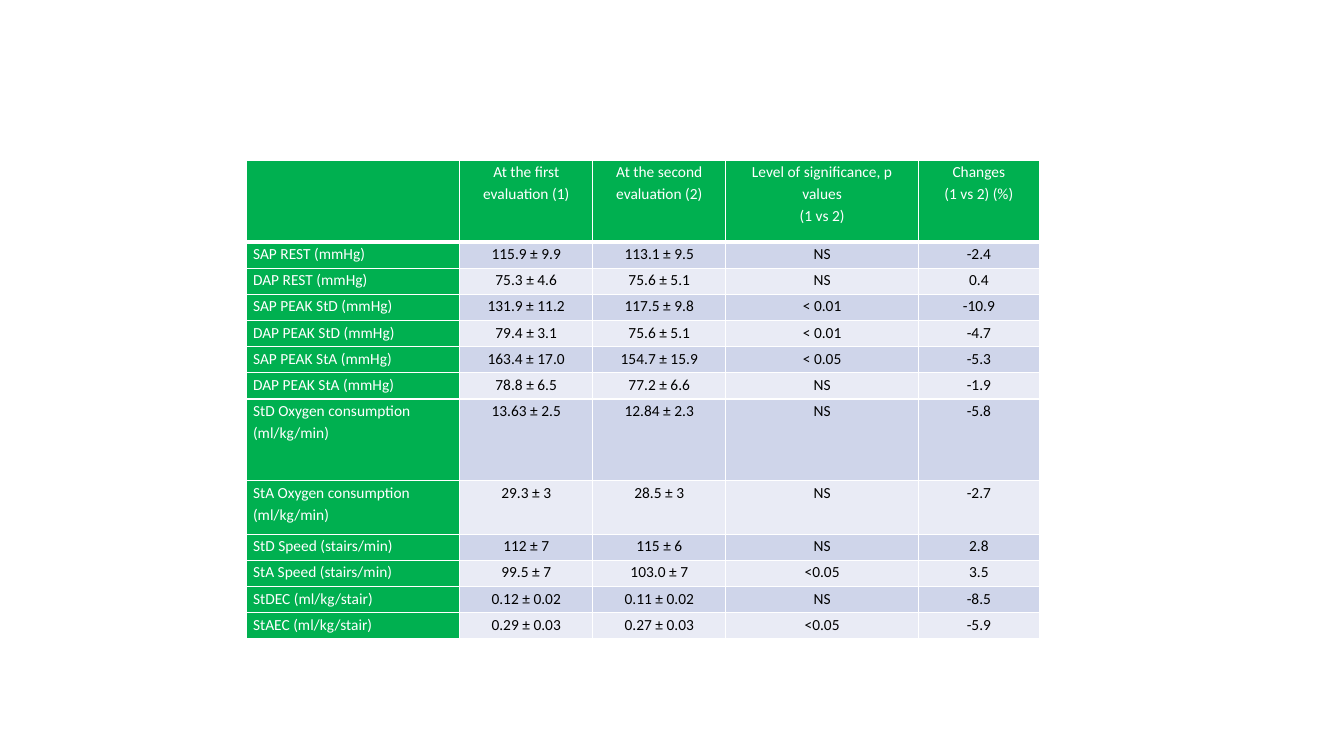
from lxml import etree
from pptx import Presentation
from pptx.dml.color import RGBColor
from pptx.enum.text import PP_ALIGN
from pptx.oxml.ns import qn
from pptx.util import Inches, Pt

LEFT, CENTER = PP_ALIGN.LEFT, PP_ALIGN.CENTER

GREEN = RGBColor(0x00, 0xB0, 0x50)
BAND_DARK = RGBColor(0xCF, 0xD5, 0xEA)
BAND_LIGHT = RGBColor(0xE9, 0xEB, 0xF5)
WHITE = RGBColor(0xFF, 0xFF, 0xFF)
BLACK = RGBColor(0x00, 0x00, 0x00)

COLUMN_WIDTHS = [2.12, 1.32, 1.32, 1.91, 1.2]
ROW_HEIGHT = 0.26
TALL_ROWS = {0: 0.81, 7: 0.81, 8: 0.53}

# Each line of a heading is its own paragraph
HEADINGS = [
    "",
    "At the first evaluation (1)",
    "At the second evaluation (2)",
    "Level of significance, p values\n(1 vs 2)",
    "Changes\n(1 vs 2) (%)",
]
MEASUREMENTS = [
    ("SAP REST (mmHg)", "115.9 ± 9.9", "113.1 ± 9.5", "NS", "-2.4"),
    ("DAP REST (mmHg)", "75.3 ± 4.6", "75.6 ± 5.1", "NS", "0.4"),
    ("SAP PEAK StD (mmHg)", "131.9 ± 11.2", "117.5 ± 9.8", "< 0.01", "-10.9"),
    ("DAP PEAK StD (mmHg)", "79.4 ± 3.1", "75.6 ± 5.1", "< 0.01", "-4.7"),
    ("SAP PEAK StA (mmHg)", "163.4 ± 17.0", "154.7 ± 15.9", "< 0.05", "-5.3"),
    ("DAP PEAK StA (mmHg)", "78.8 ± 6.5", "77.2 ± 6.6", "NS", "-1.9"),
    ("StD Oxygen consumption (ml/kg/min)", "13.63 ± 2.5", "12.84 ± 2.3", "NS", "-5.8"),
    ("StA Oxygen consumption (ml/kg/min)", "29.3 ± 3", "28.5 ± 3", "NS", "-2.7"),
    ("StD Speed (stairs/min)", "112 ± 7", "115 ± 6", "NS", "2.8"),
    ("StA Speed (stairs/min)", "99.5 ± 7", "103.0 ± 7", "<0.05", "3.5"),
    ("StDEC (ml/kg/stair)", "0.12 ± 0.02", "0.11 ± 0.02", "NS", "-8.5"),
    ("StAEC (ml/kg/stair)", "0.29 ± 0.03", "0.27 ± 0.03", "<0.05", "-5.9"),
]


class SlideBuilder:
    """Holds the text style and the current slide."""

    font_name = "Calibri"
    font_size = Pt(11)
    line_spacing = 1.15
    side_margin = Inches(0.07)

    def __init__(self, slide):
        self.slide = slide

    def add_table(self, left, top, rows):
        heights = [TALL_ROWS.get(index, ROW_HEIGHT) for index in range(len(rows))]
        table = self.slide.shapes.add_table(
            len(rows), len(COLUMN_WIDTHS), Inches(left), Inches(top),
            Inches(sum(COLUMN_WIDTHS)), Inches(sum(heights))).table
        for column, width in zip(table.columns, COLUMN_WIDTHS):
            column.width = Inches(width)
        for row, height in zip(table.rows, heights):
            row.height = Inches(height)

        for row_index, values in enumerate(rows):
            band = BAND_DARK if row_index % 2 else BAND_LIGHT
            for column_index, text in enumerate(values):
                cell = table.cell(row_index, column_index)
                is_heading = row_index == 0
                is_label = is_heading or column_index == 0
                if is_heading:
                    self.add_borders(cell)
                cell.fill.solid()
                cell.fill.fore_color.rgb = GREEN if is_label else band
                self.fill_text(cell, text, WHITE if is_label else BLACK,
                               CENTER if column_index else LEFT)

    def add_borders(self, cell):
        properties = cell._tc.get_or_add_tcPr()
        for side, width in (("L", 1), ("R", 1), ("T", 1), ("B", 3)):
            line = etree.SubElement(properties, qn(f"a:ln{side}"), w=str(Pt(width)))
            fill = etree.SubElement(line, qn("a:solidFill"))
            etree.SubElement(fill, qn("a:srgbClr"), val=str(WHITE))

    def fill_text(self, cell, text, color, alignment):
        cell.margin_left = cell.margin_right = self.side_margin
        cell.margin_top = cell.margin_bottom = 0
        frame = cell.text_frame
        for index, line in enumerate(text.split("\n")):
            paragraph = frame.add_paragraph() if index else frame.paragraphs[0]
            paragraph.alignment = alignment
            paragraph.line_spacing = self.line_spacing
            if line:
                run = paragraph.add_run()
                run.text = line
                run.font.name = self.font_name
                run.font.size = self.font_size
                run.font.bold = False
                run.font.color.rgb = color


def main():
    presentation = Presentation()
    presentation.slide_width = Inches(13.33)
    presentation.slide_height = Inches(7.5)
    blank_layout = presentation.slide_layouts[6]
    builder = SlideBuilder(presentation.slides.add_slide(blank_layout))

    # Results of the two evaluations
    builder.add_table(2.44, 1.59, [HEADINGS, *MEASUREMENTS])

    presentation.save("out.pptx")


if __name__ == "__main__":
    main()
